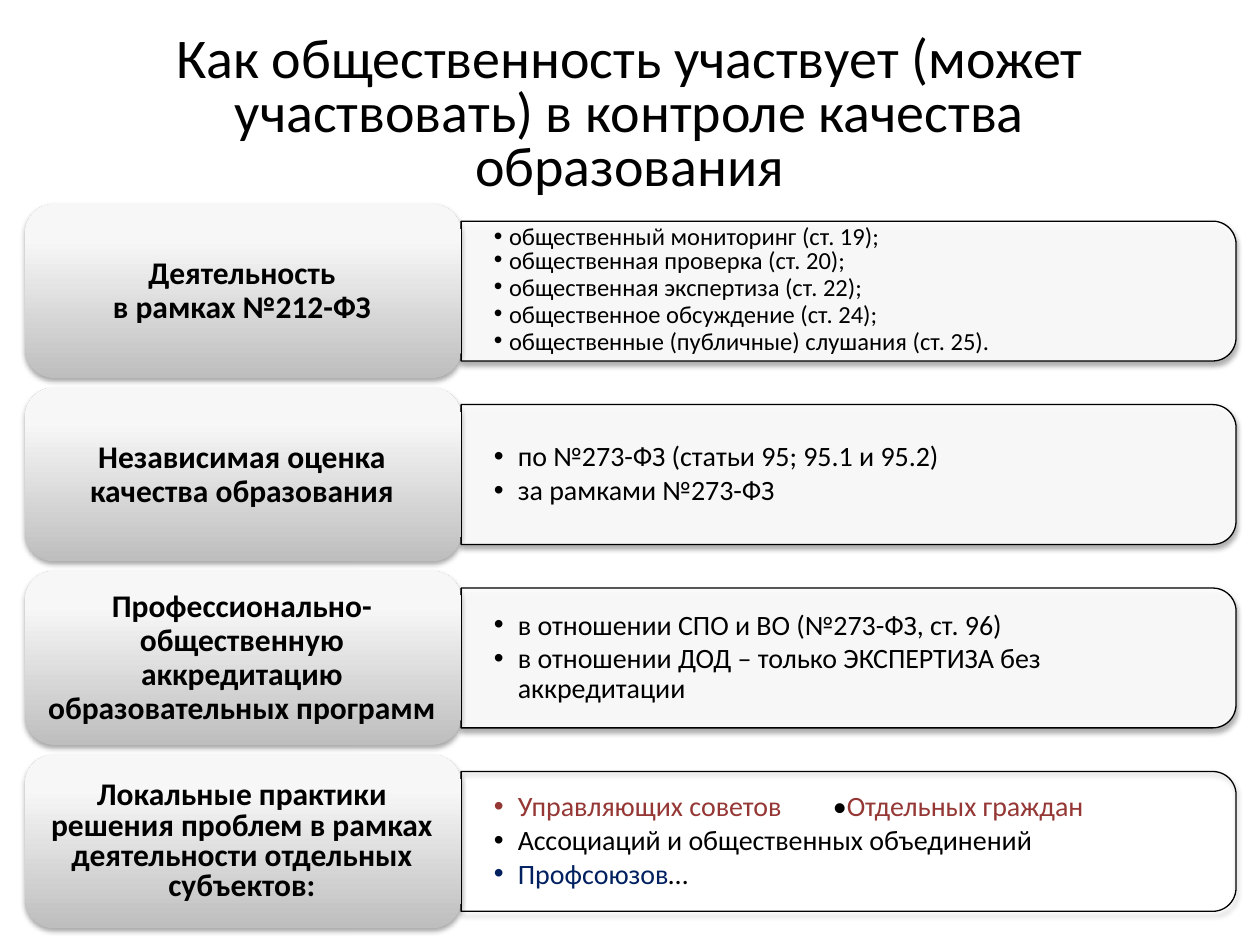
"""Build the slide on public participation in education quality control."""
import copy
from dataclasses import dataclass

import lxml.etree
import pptx
import pptx.dml.color
import pptx.enum.shapes
import pptx.enum.text
import pptx.oxml.ns
import pptx.util

Inches = pptx.util.Inches
Pt = pptx.util.Pt
RGBColor = pptx.dml.color.RGBColor
MSO_SHAPE = pptx.enum.shapes.MSO_SHAPE
CENTER = pptx.enum.text.PP_ALIGN.CENTER
qn = pptx.oxml.ns.qn

BLACK = RGBColor(0x00, 0x00, 0x00)
WHITE = RGBColor(0xFF, 0xFF, 0xFF)
RED = RGBColor(0x95, 0x37, 0x35)
NAVY = RGBColor(0x00, 0x20, 0x60)
GRADIENT = (
    (0, RGBColor(0xBE, 0xBE, 0xBE)),
    (0.8, RGBColor(0xF7, 0xF7, 0xF7)),
    (1, RGBColor(0xF8, 0xF8, 0xF8)),
)

FONT = "Calibri"
FIRST_TOP, ROW_PITCH = 1.62, 1.456
LABEL_LEFT, LABEL_WIDTH, LABEL_HEIGHT = 0.2, 3.46, 1.38
PANEL_LEFT, PANEL_WIDTH, PANEL_HEIGHT = 3.66, 6.15, 1.11
LIST_WIDTH, LIST_HEIGHT = 6.09, 1


@dataclass(frozen=True)
class Span:
    text: str
    color: RGBColor = BLACK


@dataclass(frozen=True)
class Row:
    label: tuple[str, ...]
    items: tuple[tuple[Span, ...], ...]
    size: int = 16
    indent: float = 0.19
    label_spacing: float = 0.9
    item_spacing: float = 0.9
    first_gap: float = 2
    filled: bool = True


ROWS = (
    Row(
        ("Деятельность", "в рамках №212-ФЗ"),
        (
            (Span("общественный мониторинг (ст. 19);"),),
            (Span("общественная проверка (ст. 20);"),),
            (Span("общественная экспертиза (ст. 22);"),),
            (Span("общественное обсуждение (ст. 24);"),),
            (Span("общественные (публичные) слушания (ст. 25)."),),
        ),
        size=14, indent=0.12, item_spacing=0.8, first_gap=0,
    ),
    Row(
        ("Независимая оценка", "качества образования"),
        (
            (Span("по №273-ФЗ (статьи 95; 95.1 и 95.2)"),),
            (Span("за рамками №273-ФЗ"),),
        ),
    ),
    Row(
        ("Профессионально-общественную аккредитацию образовательных программ",),
        (
            (Span("в отношении СПО и ВО (№273-ФЗ, ст. 96)"),),
            (Span("в отношении ДОД – только ЭКСПЕРТИЗА без аккредитации"),),
        ),
    ),
    Row(
        ("Локальные практики решения проблем в рамках деятельности отдельных субъектов:",),
        (
            (Span("Управляющих советов\t", RED), Span("•"), Span("Отдельных граждан", RED)),
            (Span("Ассоциаций и общественных объединений"),),
            (Span("Профсоюзов", NAVY), Span("…")),
        ),
        label_spacing=0.8, filled=False,
    ),
)


def add_child(parent, tag: str, **attributes):
    return lxml.etree.SubElement(
        parent, qn(tag), {name: str(value) for name, value in attributes.items()}
    )


def set_font(run, size: float, color: RGBColor = BLACK, bold: bool = False) -> None:
    run.font.name = FONT
    run.font.size = Pt(size)
    run.font.bold = bold
    run.font.color.rgb = color


def set_shadow(shape) -> None:
    shape.shadow.inherit = False
    effects = shape._element.spPr.find(qn("a:effectLst"))
    shadow = add_child(effects, "a:outerShdw", blurRad=Pt(3.1), dist=Pt(1.8),
                       dir=5400000, rotWithShape=0)
    color = add_child(shadow, "a:srgbClr", val=BLACK)
    add_child(color, "a:alpha", val=35000)


def add_panel(slide, center_y: float, filled: bool) -> None:
    center_x = PANEL_LEFT + PANEL_WIDTH / 2
    panel = slide.shapes.add_shape(
        MSO_SHAPE.ROUND_2_SAME_RECTANGLE,
        Inches(center_x - PANEL_HEIGHT / 2), Inches(center_y - PANEL_WIDTH / 2),
        Inches(PANEL_HEIGHT), Inches(PANEL_WIDTH),
    )
    panel.rotation = 90
    if filled:
        panel.fill.solid()
        panel.fill.fore_color.rgb = WHITE
        color = panel._element.spPr.find(qn("a:solidFill"))[0]
        add_child(color, "a:alpha", val=90000)
    else:
        panel.fill.background()
    panel.line.color.rgb = BLACK
    panel.line.width = Pt(0.75)
    set_shadow(panel)


def add_text_frame(slide, left: float, top: float, width: float, height: float,
                   inset_x: float, inset_y: float):
    box = slide.shapes.add_textbox(Inches(left), Inches(top), Inches(width), Inches(height))
    frame = box.text_frame
    frame.word_wrap = True
    frame.vertical_anchor = pptx.enum.text.MSO_ANCHOR.MIDDLE
    frame.margin_left = frame.margin_right = Inches(inset_x)
    frame.margin_top = frame.margin_bottom = Inches(inset_y)
    return frame


def add_list(slide, center_y: float, row: Row) -> None:
    frame = add_text_frame(slide, 3.65, center_y - LIST_HEIGHT / 2,
                           LIST_WIDTH, LIST_HEIGHT, 0.27, 0.14)
    for index, spans in enumerate(row.items):
        paragraph = frame.add_paragraph() if index else frame.paragraphs[0]
        paragraph.level = 1
        paragraph.line_spacing = row.item_spacing
        paragraph.space_after = Pt(2 if index else row.first_gap)
        properties = paragraph._p.get_or_add_pPr()
        properties.set("marL", str(Inches(row.indent)))
        properties.set("indent", str(-Inches(row.indent)))
        add_child(properties, "a:buFont", typeface="Arial")
        add_child(properties, "a:buChar", char="•")
        if any("\t" in span.text for span in spans):
            tabs = add_child(properties, "a:tabLst")
            add_child(tabs, "a:tab", pos=Inches(2.69), algn="l")
        for span in spans:
            run = paragraph.add_run()
            run.text = span.text
            set_font(run, row.size, span.color)


def add_label(slide, top: float, row: Row) -> None:
    plate = slide.shapes.add_shape(
        MSO_SHAPE.ROUNDED_RECTANGLE, Inches(LABEL_LEFT), Inches(top),
        Inches(LABEL_WIDTH), Inches(LABEL_HEIGHT),
    )
    plate.fill.gradient()
    plate.fill.gradient_angle = 90
    stop_list = plate._element.spPr.find(qn("a:gradFill")).find(qn("a:gsLst"))
    stop_list.append(copy.deepcopy(stop_list[-1]))
    for stop, (position, color) in zip(plate.fill.gradient_stops, GRADIENT):
        stop.position = position
        stop.color.rgb = color
    plate.line.fill.background()
    set_shadow(plate)
    frame = add_text_frame(slide, LABEL_LEFT + 0.06, top + 0.07, 3.32, 1.25, 0.07, 0.04)
    frame.text = "\n".join(row.label)
    for paragraph in frame.paragraphs:
        paragraph.alignment = CENTER
        paragraph.line_spacing = row.label_spacing
        set_font(paragraph.runs[0], 18, bold=True)


def add_title(slide, text: str) -> None:
    title = slide.shapes.title
    title.left, title.top = Inches(0.5), Inches(0.3)
    title.width, title.height = Inches(9), Inches(1.25)
    frame = title.text_frame
    frame.text = text
    frame.auto_size = pptx.enum.text.MSO_AUTO_SIZE.NONE
    frame.vertical_anchor = pptx.enum.text.MSO_ANCHOR.MIDDLE
    paragraph = frame.paragraphs[0]
    paragraph.alignment = CENTER
    paragraph.line_spacing = 0.8
    set_font(paragraph.runs[0], 32)


def main() -> None:
    presentation = pptx.Presentation()
    presentation.slide_width, presentation.slide_height = Inches(10), Inches(7.5)
    slide = presentation.slides.add_slide(presentation.slide_layouts[5])
    add_title(slide, "Как общественность участвует (может участвовать) "
                     "в контроле качества образования")
    for index, row in enumerate(ROWS):
        top = FIRST_TOP + index * ROW_PITCH
        center_y = top + LABEL_HEIGHT / 2
        add_panel(slide, center_y, row.filled)
        add_list(slide, center_y, row)
        add_label(slide, top, row)
    presentation.save("out.pptx")


if __name__ == "__main__":
    main()
